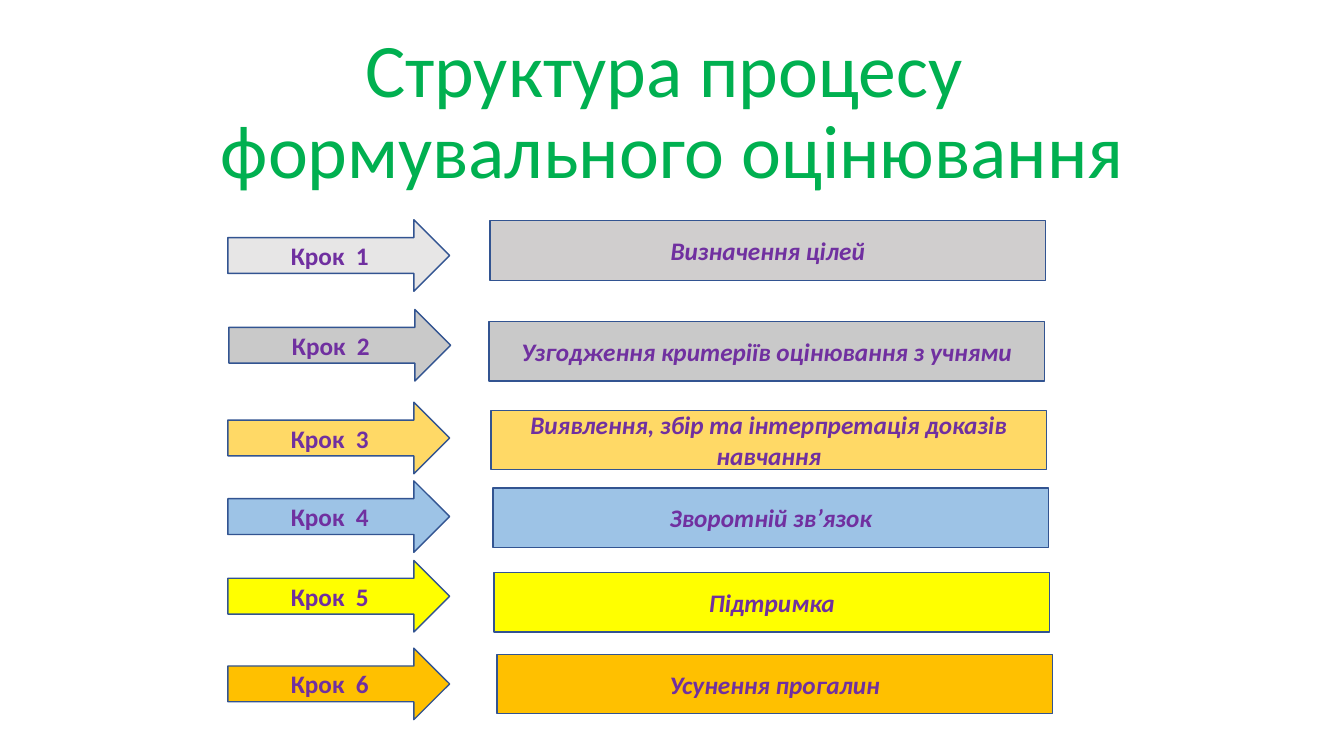
from pptx import Presentation
from pptx.dml.color import RGBColor
from pptx.enum.shapes import MSO_SHAPE
from pptx.enum.text import MSO_ANCHOR, MSO_AUTO_SIZE, PP_ALIGN
from pptx.util import Inches, Pt

TITLE = "Структура процесу \vформувального оцінювання"

STEPS = [
    {"goal": "Визначення цілей", "arrow": (2.26, 2.18), "box": (4.86, 2.19),
     "fills": ("E7E6E6", "D0CECE")},
    {"goal": "Узгодження критеріїв оцінювання з учнями", "arrow": (2.27, 3.07),
     "box": (4.85, 3.19), "fills": ("C9C9C9", "C9C9C9")},
    {"goal": "Виявлення, збір та інтерпретація доказів навчання", "arrow": (2.26, 3.99),
     "box": (4.87, 4.07), "fills": ("FFD966", "FFD966")},
    {"goal": "Зворотній зв’язок", "arrow": (2.26, 4.77), "box": (4.89, 4.84),
     "fills": ("9DC3E6", "9DC3E6")},
    {"goal": "Підтримка", "arrow": (2.26, 5.56), "box": (4.9, 5.68),
     "fills": ("FFFF00", "FFFF00")},
    {"goal": "Усунення прогалин", "arrow": (2.26, 6.43), "box": (4.93, 6.49),
     "fills": ("FFC000", "FFC000")},
]

ARROW_SIZE = (2.2, 0.71)
BOX_SIZE = (5.51, 0.59)

THEME = {
    "line": RGBColor.from_string("325491"),
    "line_width": Pt(1),
    "title": {"name": "Calibri", "size": Pt(54), "color": "00B050"},
    "step": {"name": "Calibri", "size": Pt(18), "bold": True, "color": "7030A0"},
    "goal": {"name": "Calibri", "size": Pt(18), "bold": True, "italic": True,
             "color": "7030A0"},
}


def write(shape, text, style):
    tf = shape.text_frame
    tf.text = text
    tf.word_wrap = True
    tf.auto_size = MSO_AUTO_SIZE.NONE
    tf.vertical_anchor = MSO_ANCHOR.MIDDLE
    p = tf.paragraphs[0]
    p.alignment = PP_ALIGN.CENTER
    for r in p.runs:
        for key, value in THEME[style].items():
            if key == "color":
                r.font.color.rgb = RGBColor.from_string(value)
            else:
                setattr(r.font, key, value)
    return p


def add_block(s, kind, at, size, fill, text, style):
    sp = s.shapes.add_shape(kind, *map(Inches, at + size))
    sp.shadow.inherit = False
    sp.fill.solid()
    sp.fill.fore_color.rgb = RGBColor.from_string(fill)
    sp.line.color.rgb = THEME["line"]
    sp.line.width = THEME["line_width"]
    write(sp, text, style)


def main():
    prs = Presentation()
    prs.slide_width, prs.slide_height = Inches(13.33), Inches(7.5)
    s = prs.slides.add_slide(prs.slide_layouts[5])

    title = s.shapes.title
    place = {"left": 0.92, "top": 0.4, "width": 11.5, "height": 1.45}
    for key, value in place.items():
        setattr(title, key, Inches(value))
    write(title, TITLE, "title").line_spacing = 0.9

    for number, step in enumerate(STEPS, 1):
        arrow_fill, box_fill = step["fills"]
        add_block(s, MSO_SHAPE.RIGHT_ARROW, step["arrow"], ARROW_SIZE, arrow_fill,
                  f"Крок  {number}", "step")
        add_block(s, MSO_SHAPE.RECTANGLE, step["box"], BOX_SIZE, box_fill,
                  step["goal"], "goal")

    prs.save("out.pptx")


if __name__ == "__main__":
    main()
